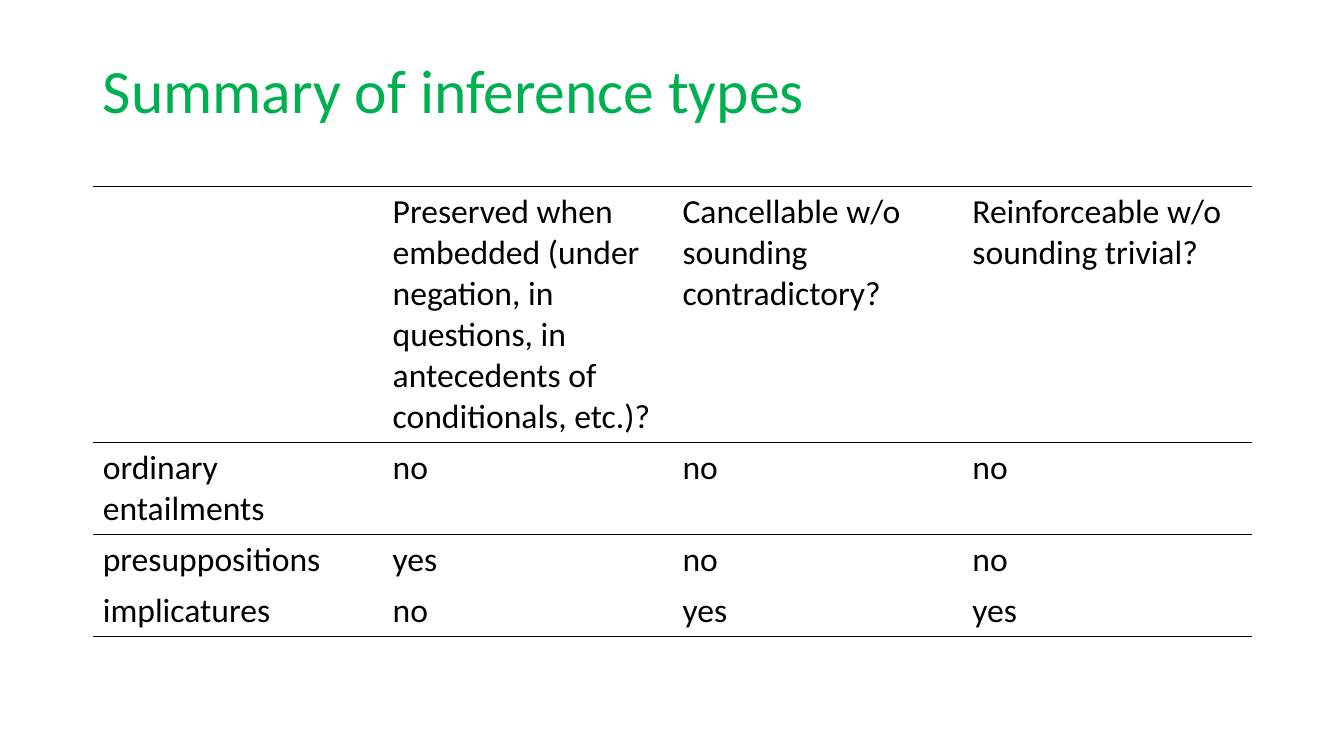
import pptx
import pptx.dml.color
import pptx.enum.text
import pptx.oxml
import pptx.oxml.ns
import pptx.util

HEADER = ["", "Preserved when embedded (under negation, in questions, "
          "in antecedents of conditionals, etc.)?",
          "Cancellable w/o sounding contradictory?",
          "Reinforceable w/o sounding trivial?"]
INFERENCES = [["ordinary entailments", "no", "no", "no"],
              ["presuppositions", "yes", "no", "no"],
              ["implicatures", "no", "yes", "yes"]]
LINES_PER_ROW = [6, 2, 1, 1]
RULES = {0, 1, 2, 4}  # row boundaries that carry a line


def color(hex_string):
    return pptx.dml.color.RGBColor.from_string(hex_string)


def write(tf, text, size=24, font="Calibri", fill="000000", spacing=None):
    p = tf.paragraphs[0]
    p.line_spacing = spacing
    p.font.size = pptx.util.Pt(size)
    if text:
        r = p.add_run()
        r.text = text
        r.font.size = pptx.util.Pt(size)
        r.font.name = font
        r.font.color.rgb = color(fill)


def border(cell, side, visible):
    line = '<a:solidFill><a:srgbClr val="000000"/></a:solidFill>' if visible else "<a:noFill/>"
    cell._tc.get_or_add_tcPr().append(pptx.oxml.parse_xml(
        f'<a:ln{side} {pptx.oxml.ns.nsdecls("a")} w="12700">{line}</a:ln{side}>'))


class Deck:
    WIDTH, HEIGHT = 13.33, 7.5
    LEFT, TOP = 0.92, 1.85      # origin of the grid
    COLUMN = 11.5 / 4
    LINE = 24 * 1.22 / 72       # one line of body text
    PADDING = 0.1               # space above and below the text of a row

    def __init__(self):
        self.prs = pptx.Presentation()
        self.prs.slide_width = pptx.util.Inches(self.WIDTH)
        self.prs.slide_height = pptx.util.Inches(self.HEIGHT)
        self.s = self.prs.slides.add_slide(self.prs.slide_layouts[5])

    def box(self, columns, top, height):
        return [pptx.util.Inches(v) for v in (self.LEFT, top, columns * self.COLUMN, height)]

    def title(self, text):
        sp = self.s.shapes.title
        sp.left, sp.top, sp.width, sp.height = self.box(4, 0, self.TOP)
        tf = sp.text_frame
        tf.word_wrap = True
        tf.vertical_anchor = pptx.enum.text.MSO_ANCHOR.MIDDLE
        write(tf, text, size=44, fill="00B050", spacing=0.9)
        tf.paragraphs[0].alignment = pptx.enum.text.PP_ALIGN.LEFT

    def table(self, rows, lines, rules):
        heights = [n * self.LINE + self.PADDING for n in lines]
        columns = len(rows[0])
        table = self.s.shapes.add_table(
            len(rows), columns, *self.box(columns, self.TOP, sum(heights))).table
        table.first_row = table.horz_banding = False
        for i, (texts, height) in enumerate(zip(rows, heights)):
            table.rows[i].height = pptx.util.Inches(height)
            for j, text in enumerate(texts):
                cell = table.cell(i, j)
                write(cell.text_frame, text)
                for side, visible in (("L", False), ("R", False),
                                      ("T", i in rules), ("B", i + 1 in rules)):
                    border(cell, side, visible)
                cell.fill.background()


def main():
    deck = Deck()
    # Heading
    deck.title("Summary of inference types")
    # Comparison of inference types
    deck.table([HEADER] + INFERENCES, LINES_PER_ROW, RULES)
    deck.prs.save("out.pptx")


if __name__ == "__main__":
    main()
